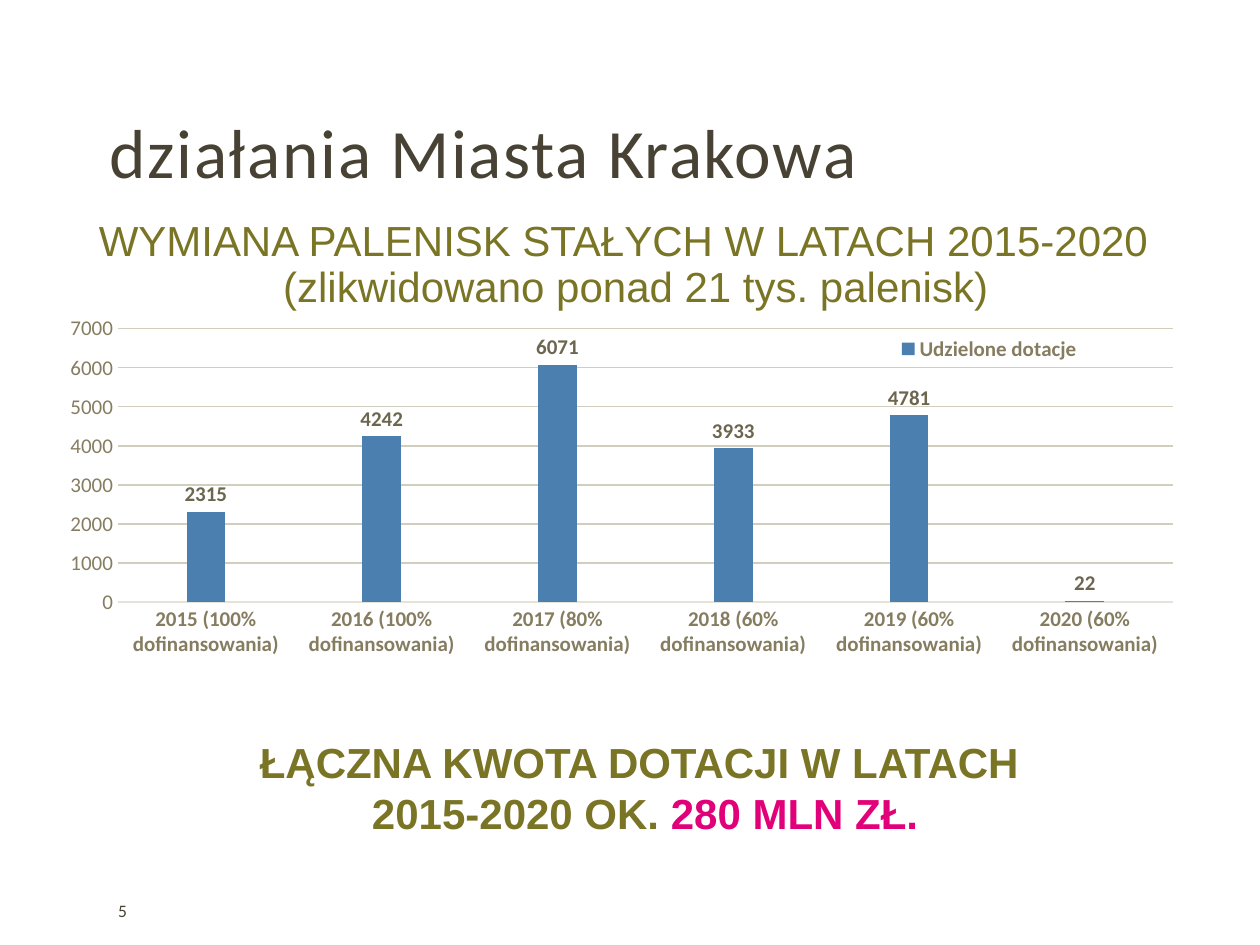
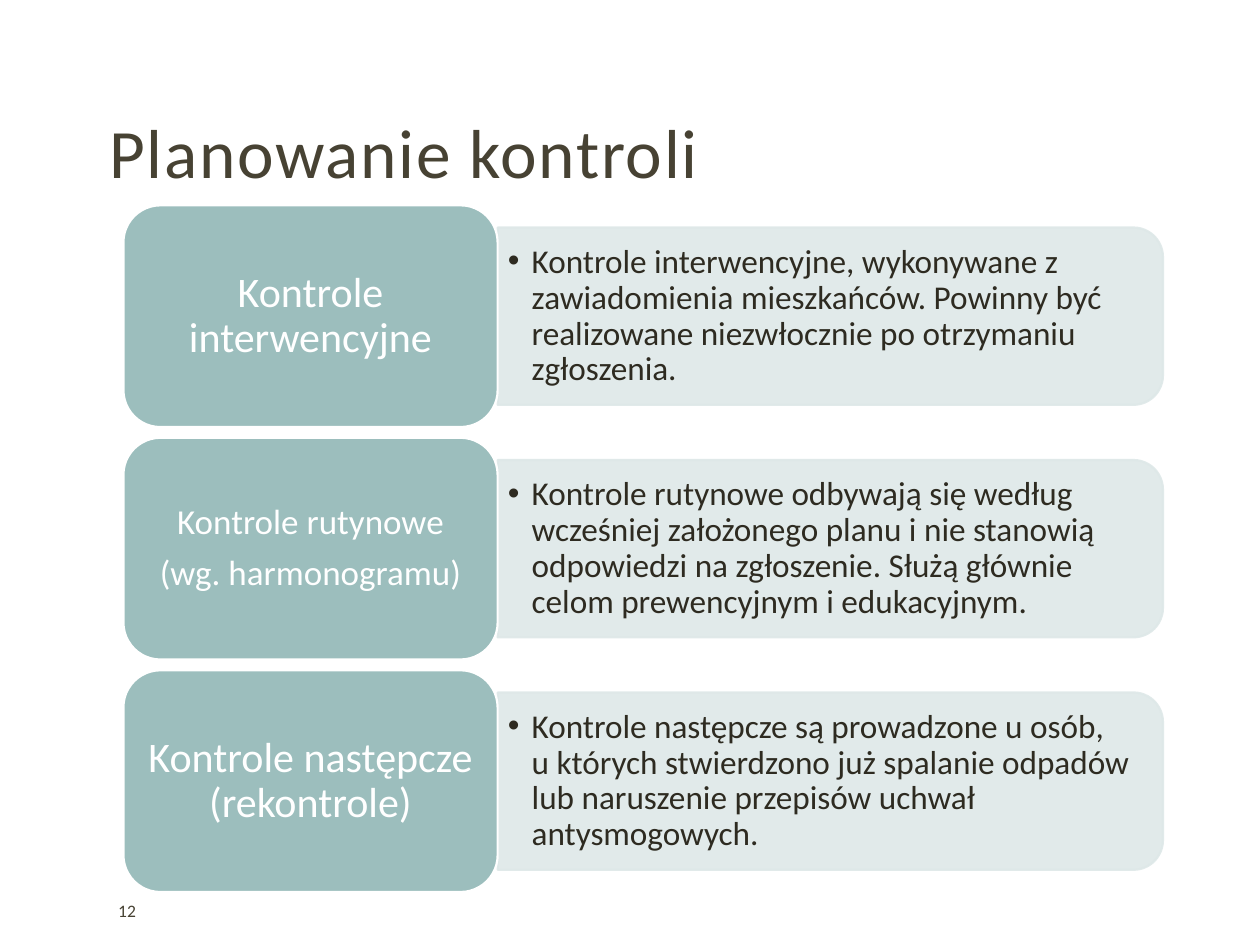
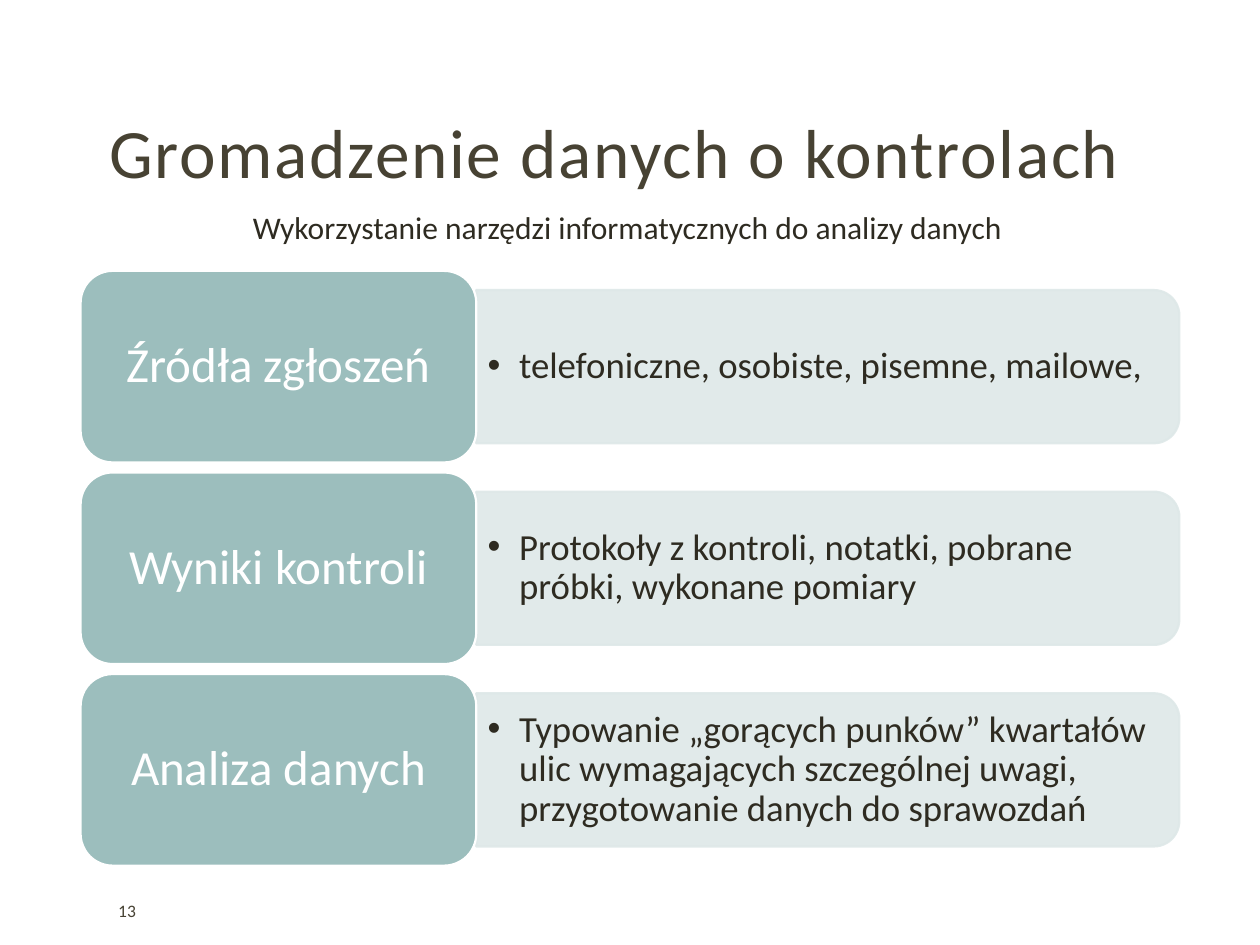
from dataclasses import dataclass

from lxml.etree import SubElement
from pptx import Presentation
from pptx.chart.data import CategoryChartData
from pptx.dml.color import RGBColor
from pptx.enum.chart import XL_CHART_TYPE, XL_LABEL_POSITION, XL_LEGEND_POSITION, XL_TICK_MARK
from pptx.enum.shapes import MSO_SHAPE
from pptx.enum.text import MSO_ANCHOR, PP_ALIGN
from pptx.oxml.ns import qn
from pptx.util import Inches, Pt

TITLE_COLOR = RGBColor(0x47, 0x42, 0x33)
BODY_COLOR = RGBColor(0x2E, 0x2B, 0x21)
OLIVE = RGBColor(0x7A, 0x74, 0x25)
MAGENTA = RGBColor(0xE2, 0x00, 0x7A)
LABEL_FILL = RGBColor(0x9C, 0xBE, 0xBD)
PANEL_FILL = RGBColor(0xDE, 0xE8, 0xE8)
WHITE = RGBColor(0xFF, 0xFF, 0xFF)
BAR_COLOR = RGBColor(0x4A, 0x7F, 0xB0)
AXIS_TEXT = RGBColor(0x86, 0x7D, 0x60)
VALUE_TEXT = RGBColor(0x6D, 0x66, 0x4E)
AXIS_LINE = RGBColor(0xE4, 0xE2, 0xD9)
GRID_LINE = RGBColor(0xD2, 0xCE, 0xBD)

BODY_FONT = "Calibri"
HEADING_FONT = "Arial"


@dataclass
class RowStyle:
    """Geometry and text sizes of a column of label and panel rows."""
    left: float
    top: float
    label_width: float
    panel_width: float
    row_height: float
    pitch: float
    label_margins: tuple
    panel_margin: float
    panel_size: float
    bullet_indent: float


def set_font(font, size, color, bold=False, name=BODY_FONT):
    font.name = name
    font.size = Pt(size)
    font.bold = bold
    font.color.rgb = color


def add_text(paragraph, text, size, color, bold=False, name=BODY_FONT):
    """Add runs to a paragraph, with a line break at each newline."""
    for number, line in enumerate(text.split("\n")):
        if number:
            paragraph.add_line_break()
        run = paragraph.add_run()
        run.text = line
        set_font(run.font, size, color, bold, name)
    return run


def add_text_box(slide, left, top, width, height, anchor=MSO_ANCHOR.TOP, wrap=True):
    box = slide.shapes.add_textbox(Inches(left), Inches(top), Inches(width), Inches(height))
    box.text_frame.word_wrap = wrap
    box.text_frame.vertical_anchor = anchor
    return box.text_frame


def set_margins(frame, horizontal, vertical):
    frame.margin_left = frame.margin_right = Inches(horizontal)
    frame.margin_top = frame.margin_bottom = Inches(vertical)


def set_hanging_indent(paragraph, indent):
    properties = paragraph._p.get_or_add_pPr()
    properties.set("marL", str(Inches(indent)))
    properties.set("indent", str(-Inches(indent)))
    return properties


def add_titled_slide(presentation, title, number):
    slide = presentation.slides.add_slide(presentation.slide_layouts[6])
    frame = add_text_box(slide, 0.77, 0.92, 8.46, 0.55, MSO_ANCHOR.MIDDLE)
    run = add_text(frame.paragraphs[0], title, 39.6, TITLE_COLOR)
    run.font._element.set("spc", "100")
    frame = add_text_box(slide, 0.84, 7.08, 0.8, 0.3, MSO_ANCHOR.MIDDLE)
    add_text(frame.paragraphs[0], str(number), 10, TITLE_COLOR)
    return slide


def add_filled_shape(slide, preset, left, top, width, height, fill, line):
    shape = slide.shapes.add_shape(preset, Inches(left), Inches(top), Inches(width), Inches(height))
    shape.shadow.inherit = False
    shape.fill.solid()
    shape.fill.fore_color.rgb = fill
    shape.line.color.rgb = line
    shape.line.width = Pt(1.25)
    return shape


def add_panel(slide, left, middle, style, text):
    """Add a panel rounded on its right side, with a bulleted text over it."""
    height = 0.8 * style.row_height
    width = style.panel_width
    # The preset is rounded at the top, so it is drawn upright and turned.
    shape = add_filled_shape(slide, MSO_SHAPE.ROUND_2_SAME_RECTANGLE,
                             left + (width - height) / 2, middle - width / 2,
                             height, width, PANEL_FILL, PANEL_FILL)
    shape.rotation = 90
    for color in shape._element.spPr.iter(qn("a:srgbClr")):
        SubElement(color, qn("a:alpha")).set("val", "90000")

    text_height = 0.9 * height
    frame = add_text_box(slide, left, middle - text_height / 2, width - 0.07, text_height,
                         MSO_ANCHOR.MIDDLE)
    set_margins(frame, style.panel_margin, 0.04)
    paragraph = frame.paragraphs[0]
    properties = set_hanging_indent(paragraph, style.bullet_indent)
    SubElement(properties, qn("a:buFont")).set("typeface", HEADING_FONT)
    SubElement(properties, qn("a:buChar")).set("char", "•")
    paragraph.line_spacing = 0.9
    add_text(paragraph, text, style.panel_size, BODY_COLOR)


def add_label(slide, top, style, lines, size):
    shape = add_filled_shape(slide, MSO_SHAPE.ROUNDED_RECTANGLE, style.left, top,
                             style.label_width, style.row_height, LABEL_FILL, WHITE)
    frame = shape.text_frame
    frame.word_wrap = True
    frame.vertical_anchor = MSO_ANCHOR.MIDDLE
    set_margins(frame, *style.label_margins)
    for number, line in enumerate(lines):
        paragraph = frame.add_paragraph() if number else frame.paragraphs[0]
        paragraph.alignment = PP_ALIGN.CENTER
        paragraph.line_spacing = 0.9
        paragraph.space_after = Pt(0.35 * size)
        add_text(paragraph, line, size, WHITE)


def add_rows(slide, style, rows):
    for number, (label_lines, label_size, text) in enumerate(rows):
        top = style.top + number * style.pitch
        add_panel(slide, style.left + style.label_width, top + style.row_height / 2, style, text)
        add_label(slide, top, style, label_lines, label_size)


def set_layout(parent, x, y, width, height, inner=False):
    """Place a plot area or legend by fractions of the chart's size."""
    for old_layout in parent.findall(qn("c:layout")):
        parent.remove(old_layout)
    layout = parent.makeelement(qn("c:layout"), {})
    manual = SubElement(layout, qn("c:manualLayout"))
    settings = [("layoutTarget", "inner")] if inner else []
    settings += [("xMode", "edge"), ("yMode", "edge"), ("x", x), ("y", y), ("w", width), ("h", height)]
    for tag, value in settings:
        SubElement(manual, qn(f"c:{tag}")).set("val", str(value))
    position = parent.find(qn("c:legendPos"))
    parent.insert(0 if position is None else 1, layout)


def add_grant_chart(slide):
    grants = {
        "2015 (100% dofinansowania)": 2315,
        "2016 (100% dofinansowania)": 4242,
        "2017 (80% dofinansowania)": 6071,
        "2018 (60% dofinansowania)": 3933,
        "2019 (60% dofinansowania)": 4781,
        "2020 (60% dofinansowania)": 22,
    }
    data = CategoryChartData()
    data.categories = list(grants)
    data.add_series("Udzielone dotacje", list(grants.values()))
    chart = slide.shapes.add_chart(XL_CHART_TYPE.COLUMN_CLUSTERED, Inches(0.39), Inches(2.45),
                                   Inches(9.1), Inches(3.19), data).chart
    set_font(chart.font, 10, BODY_COLOR)
    chart.has_title = False
    chart.has_legend = True
    chart.legend.position = XL_LEGEND_POSITION.BOTTOM
    chart.legend.include_in_layout = False
    set_font(chart.legend.font, 12, AXIS_TEXT, bold=True)
    set_layout(chart.legend._element, 0.73, 0.06, 0.18, 0.08)
    set_layout(chart._chartSpace.chart.plotArea, 0.06, 0.05, 0.92, 0.68, inner=True)

    for axis, bold in ((chart.category_axis, True), (chart.value_axis, False)):
        axis.major_tick_mark = axis.minor_tick_mark = XL_TICK_MARK.NONE
        set_font(axis.tick_labels.font, 12, AXIS_TEXT, bold)
    chart.category_axis.format.line.color.rgb = AXIS_LINE
    chart.category_axis.format.line.width = Pt(0.75)
    value_axis = chart.value_axis
    value_axis.minimum_scale = 0
    value_axis.maximum_scale = 7000
    value_axis.major_unit = 1000
    value_axis.format.line.fill.background()
    value_axis.major_gridlines.format.line.color.rgb = GRID_LINE
    value_axis.major_gridlines.format.line.width = Pt(0.75)

    plot = chart.plots[0]
    plot.vary_by_categories = False
    plot.gap_width = 355
    plot.overlap = -70
    series = plot.series[0]
    series.format.fill.solid()
    series.format.fill.fore_color.rgb = BAR_COLOR
    labels = series.data_labels
    labels.show_value = True
    labels.position = XL_LABEL_POSITION.OUTSIDE_END
    set_font(labels.font, 12, VALUE_TEXT, bold=True)


def build_grants_slide(presentation):
    slide = add_titled_slide(presentation, "działania Miasta Krakowa", 5)
    heading = add_text_box(slide, 0.39, 1.7, 9.21, 1.03).paragraphs[0]
    set_hanging_indent(heading, 0.1)
    heading.alignment = PP_ALIGN.CENTER
    heading.line_spacing = 0.9
    add_text(heading, "WYMIANA PALENISK STAŁYCH W LATACH 2015-2020 \n"
                      "(zlikwidowano ponad 21 tys. palenisk)", 24, OLIVE, name=HEADING_FONT)
    total = add_text_box(slide, 1.38, 5.8, 7.48, 1.03).paragraphs[0]
    total.alignment = PP_ALIGN.CENTER
    add_text(total, "ŁĄCZNA KWOTA DOTACJI W LATACH \n2015-2020 OK. ", 24, OLIVE, True, HEADING_FONT)
    add_text(total, "280 MLN ZŁ.", 24, MAGENTA, True, HEADING_FONT)
    add_grant_chart(slide)


def build_planning_slide(presentation):
    slide = add_titled_slide(presentation, "Planowanie kontroli", 12)
    style = RowStyle(left=0.98, top=1.63, label_width=2.97, panel_width=5.28, row_height=1.76,
                     pitch=1.845, label_margins=(0.1, 0.05), panel_margin=0.08,
                     panel_size=19, bullet_indent=0.19)
    add_rows(slide, style, [
        (["Kontrole interwencyjne"], 24,
         "Kontrole interwencyjne, wykonywane z zawiadomienia mieszkańców. "
         "Powinny być realizowane niezwłocznie po otrzymaniu zgłoszenia."),
        (["Kontrole rutynowe", "(wg. harmonogramu)"], 20,
         "Kontrole rutynowe odbywają się według wcześniej założonego planu i nie stanowią "
         "odpowiedzi na zgłoszenie. Służą głównie celom prewencyjnym i edukacyjnym."),
        (["Kontrole następcze (rekontrole)"], 24,
         "Kontrole następcze są prowadzone u osób, \nu których stwierdzono już spalanie "
         "odpadów lub naruszenie przepisów uchwał antysmogowych."),
    ])


def build_data_slide(presentation):
    slide = add_titled_slide(presentation, "Gromadzenie danych o kontrolach", 13)
    style = RowStyle(left=0.64, top=2.15, label_width=3.14, panel_width=5.58, row_height=1.52,
                     pitch=1.6, label_margins=(0.12, 0.06), panel_margin=0.09,
                     panel_size=21, bullet_indent=0.25)
    add_rows(slide, style, [
        (["Źródła zgłoszeń"], 28, "telefoniczne, osobiste, pisemne, mailowe,"),
        (["Wyniki kontroli"], 28, "Protokoły z kontroli, notatki, pobrane próbki, wykonane pomiary"),
        (["Analiza danych"], 28,
         "Typowanie „gorących punków” kwartałów ulic wymagających szczególnej uwagi, "
         "przygotowanie danych do sprawozdań"),
    ])
    frame = add_text_box(slide, 1.91, 1.6, 6.17, 0.4, wrap=False)
    add_text(frame.paragraphs[0], "Wykorzystanie narzędzi informatycznych do analizy danych",
             18, BODY_COLOR)


def main():
    presentation = Presentation()
    presentation.slide_width = Inches(10)
    presentation.slide_height = Inches(7.5)
    build_grants_slide(presentation)
    build_planning_slide(presentation)
    build_data_slide(presentation)
    presentation.save("out.pptx")


if __name__ == "__main__":
    main()
